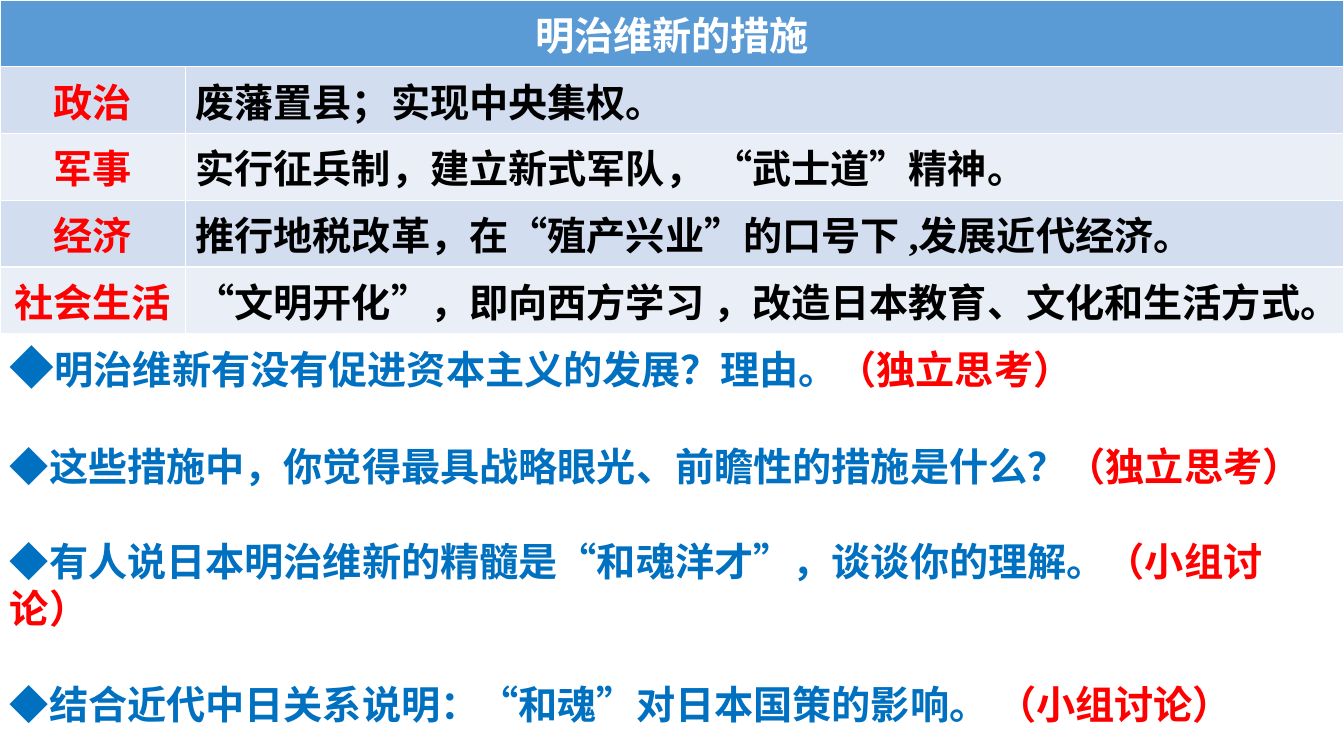
from dataclasses import dataclass

from pptx import Presentation
from pptx.dml.color import RGBColor
from pptx.enum.text import MSO_ANCHOR, PP_ALIGN
from pptx.util import Cm, Pt


@dataclass(frozen=True)
class Theme:
    header: RGBColor = RGBColor(0x5B, 0x9B, 0xD5)
    bands: tuple = (RGBColor(0xD2, 0xDE, 0xEF), RGBColor(0xEA, 0xEF, 0xF7))
    white: RGBColor = RGBColor(0xFF, 0xFF, 0xFF)
    black: RGBColor = RGBColor(0, 0, 0)
    red: RGBColor = RGBColor(0xFF, 0, 0)
    blue: RGBColor = RGBColor(0, 0x70, 0xC0)
    size: Pt = Pt(28)
    large: Pt = Pt(32)
    line: Pt = Pt(34)
    header_font: str = "Calibri"
    table_font: str = "Times New Roman"
    question_font: str = "Noto Sans CJK SC"


theme = Theme()


def style(paragraph, font, color=None):
    paragraph.font.name = font
    paragraph.font.size = theme.size
    paragraph.font.bold = True
    if color is not None:
        paragraph.font.color.rgb = color


def fill_cell(cell, text, fill, color, font, align):
    cell.fill.solid()
    cell.fill.fore_color.rgb = fill
    cell.vertical_anchor = MSO_ANCHOR.MIDDLE
    paragraph = cell.text_frame.paragraphs[0]
    paragraph.text = text
    paragraph.alignment = align
    style(paragraph, font, color)


presentation = Presentation()
presentation.slide_width = Cm(33.87)
presentation.slide_height = Cm(19.05)
slide = presentation.slides.add_slide(presentation.slide_layouts[6])

measures = [
    ("政治", "废藩置县；实现中央集权。"),
    ("军事", "实行征兵制，建立新式军队， “武士道”精神。"),
    ("经济", "推行地税改革，在“殖产兴业”的口号下 ,发展近代经济。"),
    ("社会生活", "“文明开化”，即向西方学习 ，改造日本教育、文化和生活方式。"),
]
row_height = Cm(1.68)
table = slide.shapes.add_table(
    len(measures) + 1, 2, 0, 0, Cm(33.87), row_height * (len(measures) + 1)
).table
table.columns[0].width = Cm(4.67)
table.columns[1].width = Cm(29.2)

table.cell(0, 0).merge(table.cell(0, 1))
fill_cell(table.cell(0, 0), "明治维新的措施", theme.header, theme.white,
          theme.header_font, PP_ALIGN.CENTER)
for row, (field, measure) in enumerate(measures, 1):
    band = theme.bands[(row - 1) % 2]
    fill_cell(table.cell(row, 0), field, band, theme.red, theme.table_font, PP_ALIGN.CENTER)
    fill_cell(table.cell(row, 1), measure, band, theme.black, theme.table_font, PP_ALIGN.LEFT)

questions = [
    ("明治维新有没有促进资本主义的发展？理由。", "（独立思考）"),
    ("这些措施中，你觉得最具战略眼光、前瞻性的措施是什么？", "（独立思考）"),
    ("有人说日本明治维新的精髓是“和魂洋才”，谈谈你的理解。", "（小组讨论）"),
    ("结合近代中日关系说明：“和魂”对日本国策的影响。 ", "（小组讨论）"),
]
discussion = slide.shapes.add_textbox(0, Cm(8.6), Cm(33.87), Cm(9.8)).text_frame
discussion.word_wrap = True
for index, (question, mode) in enumerate(questions):
    paragraph = discussion.paragraphs[0] if index == 0 else discussion.add_paragraph()
    style(paragraph, theme.question_font)
    paragraph.line_spacing = theme.line
    paragraph.space_after = theme.line if index < len(questions) - 1 else Pt(0)
    for text, color in (("◆", theme.blue), (question, theme.blue), (mode, theme.red)):
        run = paragraph.add_run()
        run.text = text
        run.font.color.rgb = color
    if index == 0:
        paragraph.runs[0].font.size = theme.large

presentation.save("out.pptx")
